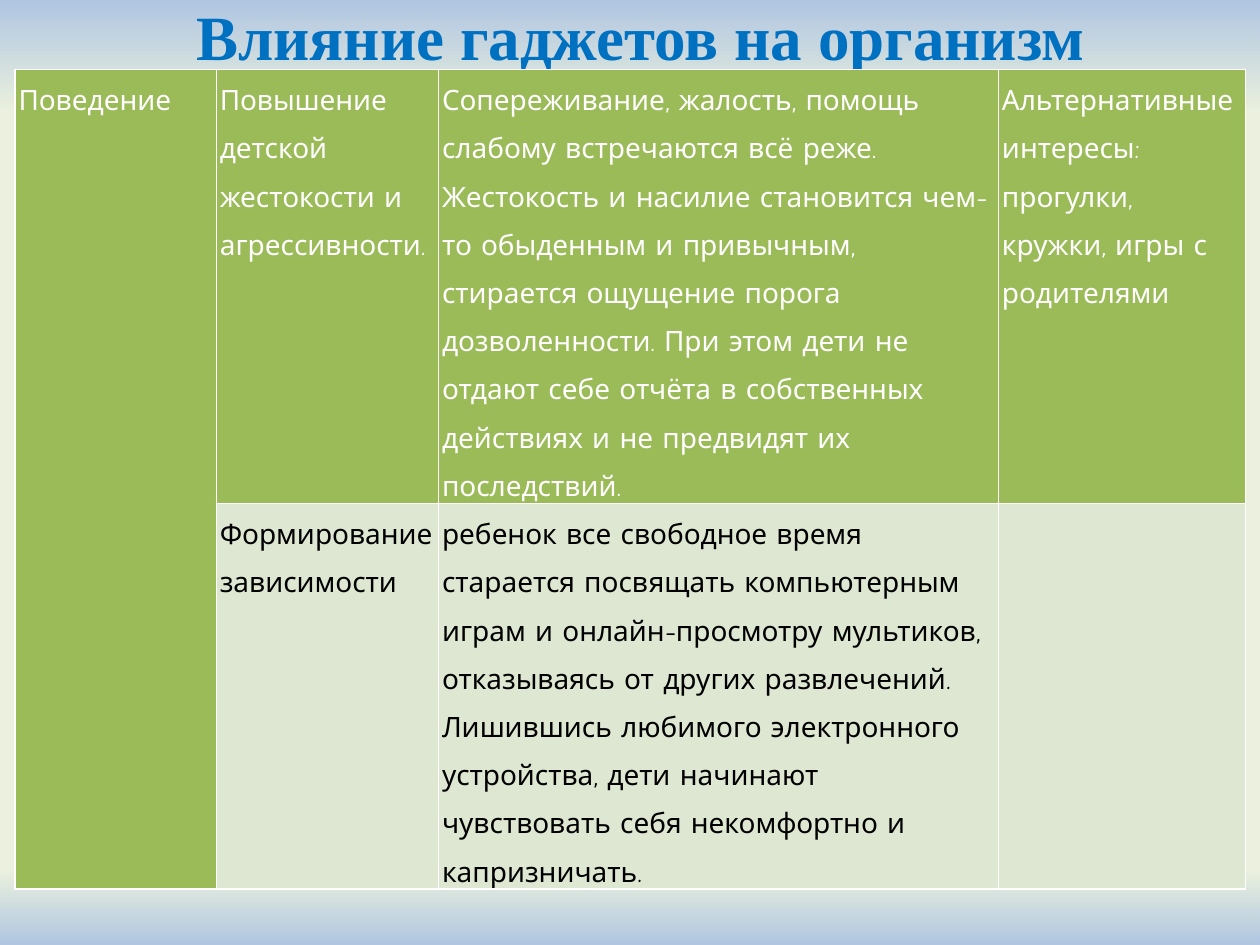
from lxml.etree import SubElement
from pptx import Presentation
from pptx.dml.color import RGBColor
from pptx.enum.text import MSO_ANCHOR, PP_ALIGN
from pptx.oxml.ns import qn
from pptx.util import Pt

COLORS = {
    "sky": "B0C6E1",
    "cream": "EBF1DE",
    "title": "0070C0",
    "green": "9BBB59",
    "pale": "DEE7D1",
    "white": "FFFFFF",
    "black": "000000",
}


def add_color(parent, name):
    SubElement(parent, qn("a:srgbClr"), val=COLORS[name])


def add_borders(cell):
    """Draw a thin white line on all four sides of a cell."""
    properties = cell._tc.get_or_add_tcPr()
    for index, side in enumerate(("lnL", "lnR", "lnT", "lnB")):
        line = properties.makeelement(qn(f"a:{side}"), {"w": str(Pt(1))})
        add_color(SubElement(line, qn("a:solidFill")), "white")
        properties.insert(index, line)


deck = Presentation()
deck.slide_width, deck.slide_height = Pt(720), Pt(540)
page = deck.slides.add_slide(deck.slide_layouts[5])

# Background: blue at the top and bottom edges, cream between
background = page.background.fill
background.gradient()
background.gradient_angle = 270
stops = page.element.find(".//" + qn("a:gsLst"))
for stop in list(stops):
    stops.remove(stop)
for percent, name in ((0, "sky"), (12, "cream"), (92, "cream"), (100, "sky")):
    add_color(SubElement(stops, qn("a:gs"), pos=str(percent * 1000)), name)

# Title
title = page.shapes.title
title.left, title.top, title.width, title.height = Pt(48), Pt(0), Pt(636), Pt(40)
frame = title.text_frame
frame.margin_top = frame.margin_bottom = 0
frame.vertical_anchor = MSO_ANCHOR.MIDDLE
para = frame.paragraphs[0]
para.alignment = PP_ALIGN.CENTER
span = para.add_run()
span.text = "Влияние гаджетов на организм"
span.font.name = "Times New Roman"
span.font.size = Pt(36)
span.font.bold = True
span.font.color.rgb = RGBColor.from_string(COLORS["title"])

# Table
column_widths = (115, 127, 320, 141)
row_heights = (248, 220)
rows = (
    (
        "Поведение",
        "Повышение детской жестокости и агрессивности.",
        "Сопереживание, жалость, помощь слабому встречаются всё реже. "
        "Жестокость и насилие становится чем-то обыденным и привычным, "
        "стирается ощущение порога дозволенности. При этом дети не отдают "
        "себе отчёта в собственных действиях и не предвидят их последствий.",
        "Альтернативные интересы: прогулки, кружки, игры с родителями",
    ),
    (
        "",
        "Формирование зависимости",
        "ребенок все свободное время старается посвящать компьютерным играм "
        "и онлайн-просмотру мультиков, отказываясь от других развлечений. "
        "Лишившись любимого электронного устройства, дети начинают "
        "чувствовать себя некомфортно и капризничать.",
        "",
    ),
)
row_styles = (("green", "white"), ("pale", "black"))

table = page.shapes.add_table(
    len(rows), len(column_widths), Pt(8.64), Pt(39.6),
    Pt(sum(column_widths)), Pt(sum(row_heights)),
).table
table.first_row = table.horz_banding = False
for column, width in zip(table.columns, column_widths):
    column.width = Pt(width)
for row, height, texts, (fill, ink) in zip(table.rows, row_heights, rows, row_styles):
    row.height = Pt(height)
    for cell, text in zip(row.cells, texts):
        cell.margin_left = cell.margin_right = Pt(2)
        cell.margin_top = cell.margin_bottom = 0
        cell.fill.solid()
        cell.fill.fore_color.rgb = RGBColor.from_string(COLORS[fill])
        add_borders(cell)
        if text:
            para = cell.text_frame.paragraphs[0]
            para.line_spacing = 1.5
            span = para.add_run()
            span.text = text
            span.font.name = "Comic Neue"
            span.font.size = Pt(16)
            span.font.color.rgb = RGBColor.from_string(COLORS[ink])
table.cell(0, 0).merge(table.cell(1, 0))

deck.save("out.pptx")
